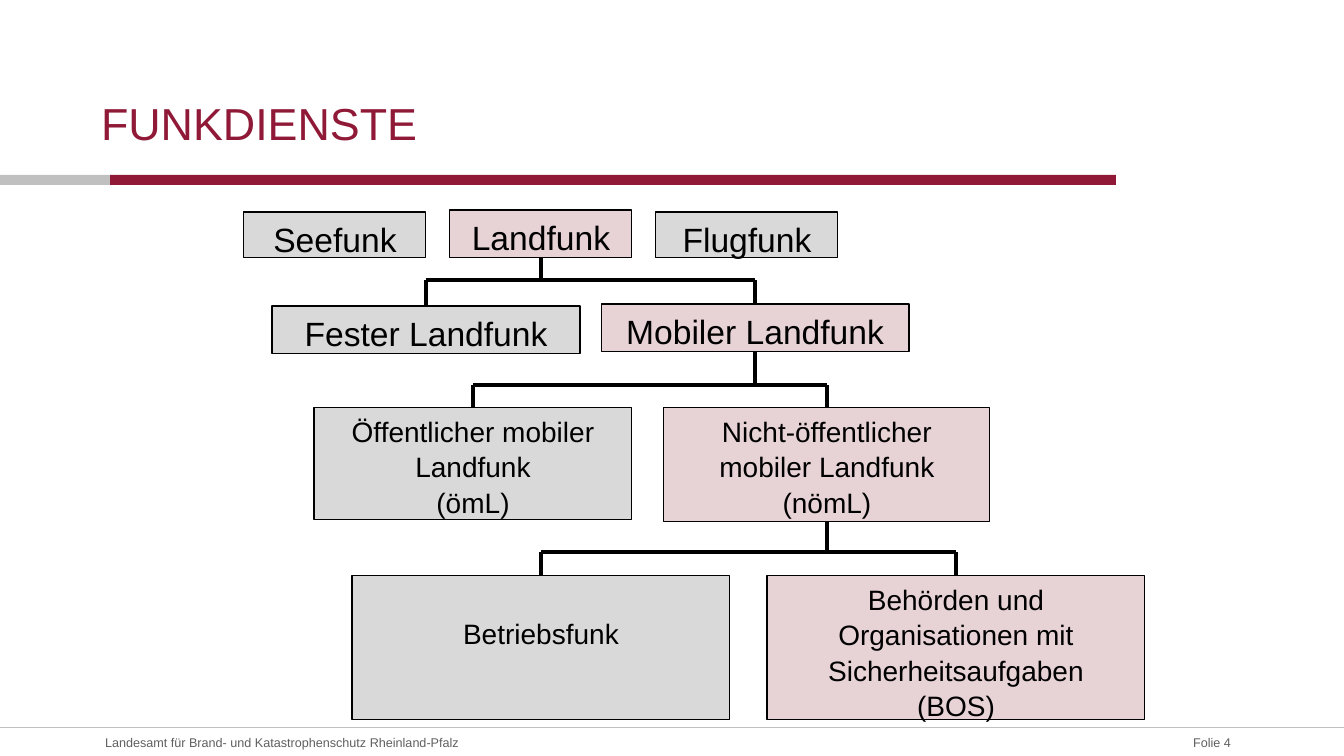
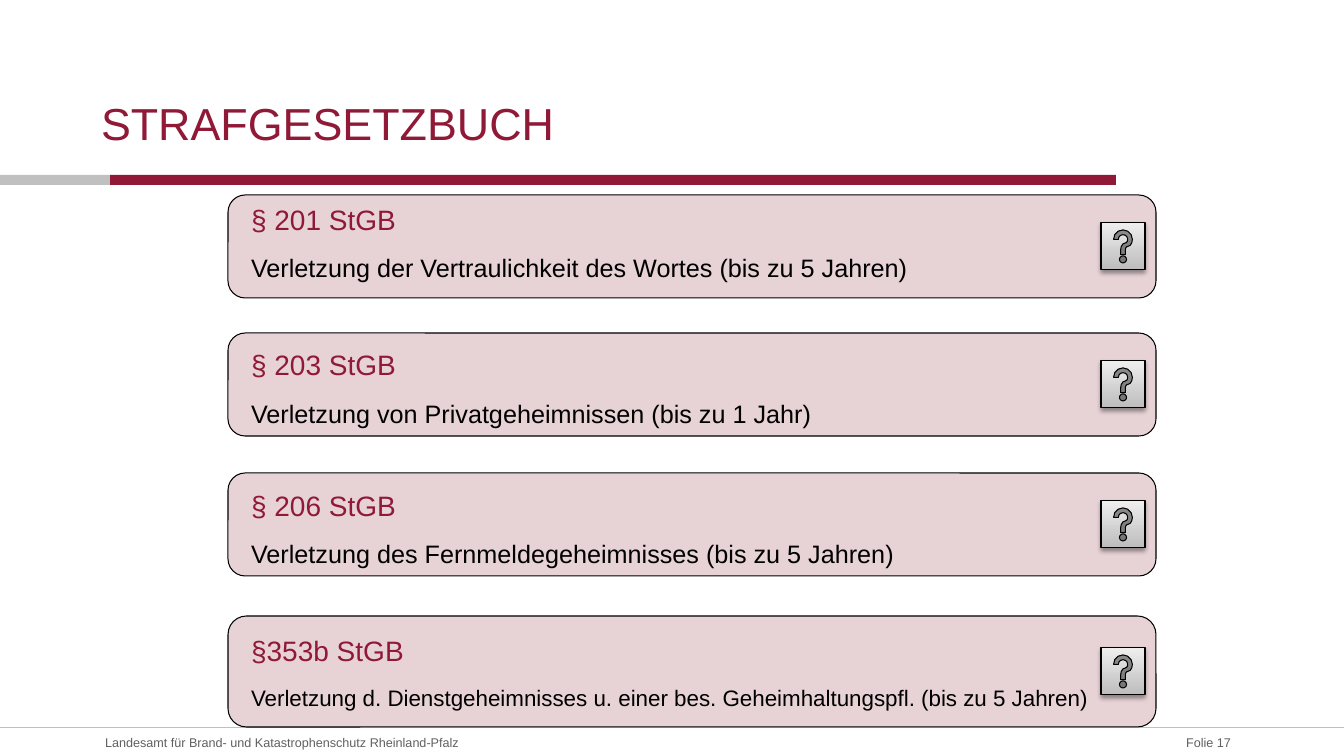
from lxml.etree import SubElement
from pptx import Presentation
from pptx.dml.color import RGBColor
from pptx.enum.shapes import MSO_CONNECTOR, MSO_SHAPE
from pptx.enum.text import MSO_ANCHOR as ANCHOR, PP_ALIGN as ALIGN
from pptx.oxml.ns import qn
from pptx.util import Pt

PX = 9071
BOTTOM, TOP = 2, 0
RED, ROSE, GRAY, SILVER = "8F1936", "E7D2D6", "D9D9D9", "C0C0C0"
BLACK, FOOTER_GRAY = "000000", "606060"
color = RGBColor.from_string

FLUSH = {"margin_left": 0, "margin_top": 0, "margin_right": 0, "margin_bottom": 0,
         "word_wrap": True}
PADDED = {"margin_left": 10 * PX, "margin_top": 5 * PX, "margin_right": 10 * PX,
          "margin_bottom": 5 * PX, "word_wrap": True, "vertical_anchor": ANCHOR.TOP}


def add_box(slide, kind, bounds, fill, outlined=True):
    shape = slide.shapes.add_shape(kind, *(value * PX for value in bounds))
    shape.shadow.inherit = False
    if fill:
        shape.fill.solid()
        shape.fill.fore_color.rgb = color(fill)
    if outlined:
        shape.line.color.rgb = color(BLACK)
        shape.line.width = Pt(0.75)
    else:
        shape.line.fill.background()
    return shape


def write_text(shape, frame_format, lines, paragraph_format):
    frame = shape.text_frame
    for name, value in frame_format.items():
        setattr(frame, name, value)
    for index, (text, size, text_color, space_before) in enumerate(lines):
        paragraph = frame.add_paragraph() if index else frame.paragraphs[0]
        paragraph_values = {"space_before": Pt(space_before), **paragraph_format}
        for name, value in paragraph_values.items():
            setattr(paragraph, name, value)
        run = paragraph.add_run()
        run.text = text
        for name, value in {"name": "Arial", "size": Pt(size)}.items():
            setattr(run.font, name, value)
        run.font.color.rgb = color(text_color)


presentation = Presentation()
presentation.slide_width = 1344 * PX
presentation.slide_height = 756 * PX

slides = []
connectors = []
for title, number in [("FUNKDIENSTE", 4), ("STRAFGESETZBUCH", 17)]:
    slide = presentation.slides.add_slide(presentation.slide_layouts[6])
    slides.append(slide)
    for left, width, fill in [(110, 1006, RED), (0, 110, SILVER)]:
        add_box(slide, MSO_SHAPE.RECTANGLE, (left, 175, width, 10), fill, outlined=False)
    footer_rule = slide.shapes.add_connector(
        MSO_CONNECTOR.STRAIGHT, 0, 728 * PX, 1344 * PX, 728 * PX)
    connectors.append((footer_rule, SILVER, 0.75))
    for text, bounds, size, text_color, anchor, alignment in [
        (title, (101, 48, 858, 102), 32, RED, ANCHOR.BOTTOM, ALIGN.LEFT),
        ("Landesamt für Brand- und Katastrophenschutz Rheinland-Pfalz",
         (105, 728, 741, 28), 9, FOOTER_GRAY, ANCHOR.MIDDLE, ALIGN.LEFT),
        (f"Folie {number}", (1067, 728, 164, 28), 9, FOOTER_GRAY, ANCHOR.MIDDLE, ALIGN.RIGHT),
    ]:
        text_box = slide.shapes.add_textbox(*(value * PX for value in bounds))
        write_text(text_box, {**FLUSH, "vertical_anchor": anchor},
                   [(text, size, text_color, 0)], {"alignment": alignment})

services_slide, law_slide = slides

services = {}
for name, lines, bounds, fill, size, margin_top in [
    ("sea", ["Seefunk"], (244, 212, 182, 46), GRAY, 24, 5),
    ("land", ["Landfunk"], (450, 210, 182, 48), ROSE, 24, 5),
    ("air", ["Flugfunk"], (656, 212, 182, 46), GRAY, 24, 5),
    ("fixed", ["Fester Landfunk"], (272, 306, 308, 48), GRAY, 24, 5),
    ("mobile", ["Mobiler Landfunk"], (601, 304, 308, 48), ROSE, 24, 5),
    ("public", ["Öffentlicher mobiler Landfunk", "(ömL)"],
     (314, 408, 318, 112), GRAY, 20, 5),
    ("private", ["Nicht-öffentlicher mobiler Landfunk", "(nömL)"],
     (664, 408, 326, 114), ROSE, 20, 5),
    ("company", ["Betriebsfunk"], (352, 576, 378, 144), GRAY, 20, 39),
    ("authorities", ["Behörden und Organisationen mit Sicherheitsaufgaben", "(BOS)"],
     (767, 576, 378, 144), ROSE, 20, 5),
]:
    box = add_box(services_slide, MSO_SHAPE.RECTANGLE, bounds, fill)
    write_text(box, {**PADDED, "margin_top": margin_top * PX},
               [(line, size, BLACK, 0) for line in lines],
               {"alignment": ALIGN.CENTER, "line_spacing": 1.05})
    services[name] = box

for parent, children, bar_top in [
    ("land", ("fixed", "mobile"), 280),
    ("mobile", ("public", "private"), 385),
    ("private", ("company", "authorities"), 552),
]:
    bar_y = bar_top * PX
    middles = []
    for name, side in [(parent, BOTTOM), (children[0], TOP), (children[1], TOP)]:
        box = services[name]
        middle = box.left + box.width // 2
        middles.append(middle)
        stem = services_slide.shapes.add_connector(
            MSO_CONNECTOR.STRAIGHT, middle, bar_y, middle, bar_y)
        stem.begin_connect(box, side)
        connectors.append((stem, BLACK, 3))
    bar = services_slide.shapes.add_connector(
        MSO_CONNECTOR.STRAIGHT, middles[1], bar_y, middles[2], bar_y)
    connectors.append((bar, BLACK, 3))

for connector, line_color, width in connectors:
    connector.line.color.rgb = color(line_color)
    connector.line.width = Pt(width)
    SubElement(connector.element.spPr, qn("a:effectLst"))

law_lines = []
for section, offence, size, space_before, card_top, card_height, button_top in [
    ("§ 201 StGB", "Verletzung der Vertraulichkeit des Wortes (bis zu 5 Jahren)",
     18, 0, 195, 103, 223),
    ("§ 203 StGB", "Verletzung von Privatgeheimnissen (bis zu 1 Jahr)",
     18, 49, 333, 103, 361),
    ("§ 206 StGB", "Verletzung des Fernmeldegeheimnisses (bis zu 5 Jahren)",
     18, 45, 473, 103, 501),
    ("§353b StGB",
     "Verletzung d. Dienstgeheimnisses u. einer bes. Geheimhaltungspfl. (bis zu 5 Jahren)",
     16, 49, 616, 111, 648),
]:
    add_box(law_slide, MSO_SHAPE.ROUNDED_RECTANGLE, (228, card_top, 928, card_height), ROSE)
    law_lines += [(section, 20, RED, space_before), (offence, size, BLACK, 14)]

    button = add_box(law_slide, MSO_SHAPE.ACTION_BUTTON_HELP, (1101, button_top, 44, 47), None)
    button.fill.gradient()
    button.fill.gradient_angle = 90
    for stop, stop_color in zip(button.fill.gradient_stops, ("BDBDBD", "EEEEEE")):
        stop.color.rgb = color(stop_color)
    effects = button.element.spPr.find(qn("a:effectLst"))
    shadow = SubElement(effects, qn("a:outerShdw"), blurRad="40000", dist="20000",
                        dir="5400000", rotWithShape="0")
    shadow_color = SubElement(shadow, qn("a:srgbClr"), val=BLACK)
    SubElement(shadow_color, qn("a:alpha"), val="38000")

law_text = law_slide.shapes.add_textbox(251 * PX, 206 * PX, 905 * PX, 504 * PX)
write_text(law_text, FLUSH, law_lines, {"line_spacing": 0.9})

presentation.save("out.pptx")
